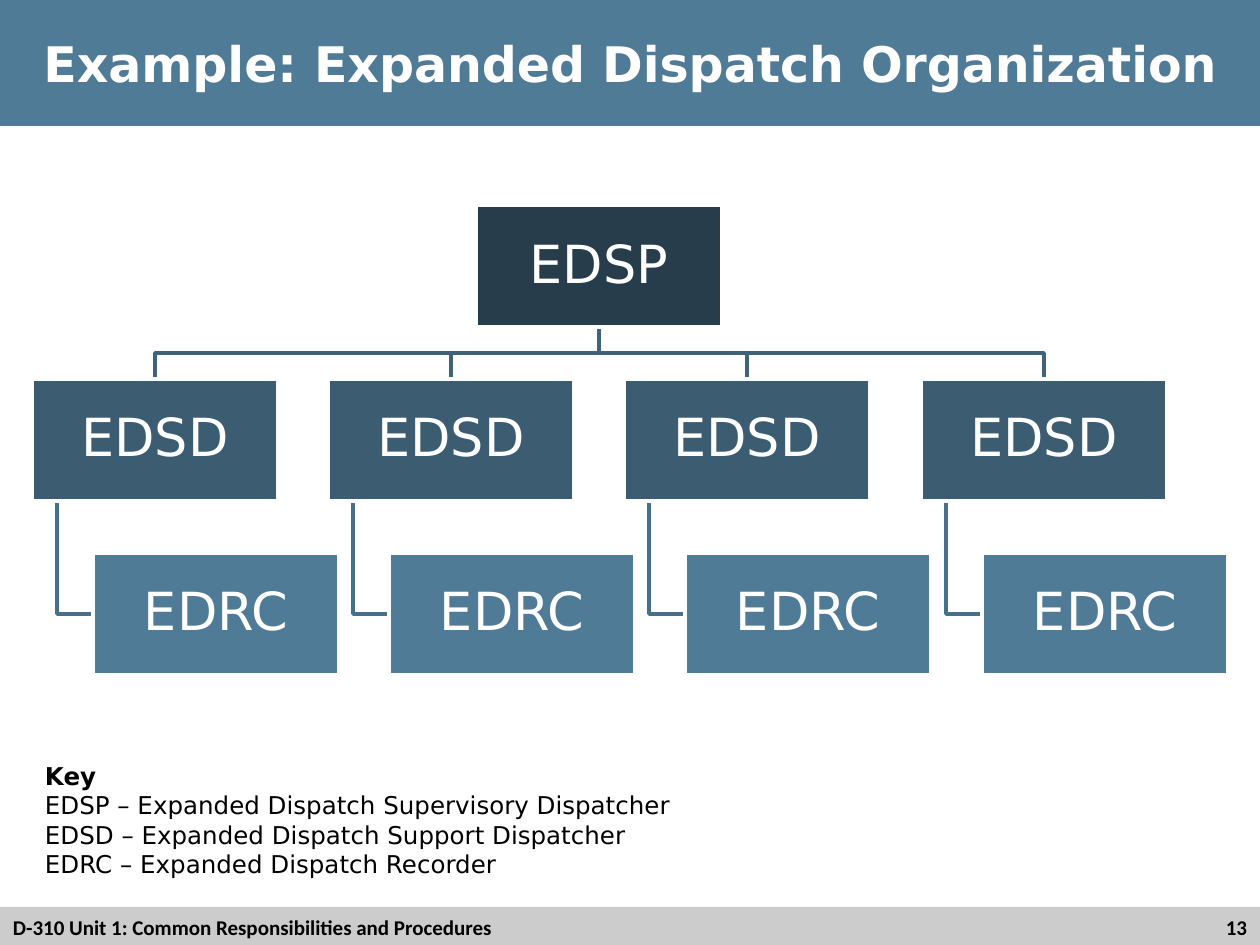
from pptx import Presentation
from pptx.dml.color import RGBColor
from pptx.enum.shapes import MSO_SHAPE
from pptx.enum.text import MSO_ANCHOR, PP_ALIGN
from pptx.util import Emu, Pt

SCALE = 914400 / 126
WHITE = RGBColor(0xFF, 0xFF, 0xFF)
BLACK = RGBColor(0, 0, 0)
GRAY = RGBColor(0xCC, 0xCC, 0xCC)
NAVY = RGBColor(0x28, 0x3D, 0x4C)
SLATE = RGBColor(0x3C, 0x5C, 0x71)
STEEL = RGBColor(0x50, 0x7B, 0x97)
UPPER_LINE = RGBColor(0x40, 0x63, 0x79)
LOWER_LINE = RGBColor(0x49, 0x70, 0x89)

deck = Presentation()
deck.slide_width = Emu(round(1260 * SCALE))
deck.slide_height = Emu(round(945 * SCALE))
page = deck.slides.add_slide(deck.slide_layouts[6])


def add_text(text, left, top, width, height, fill=None, border=None, size=14,
             font="DejaVu Sans", color=BLACK, bold_lines=0, align=PP_ALIGN.LEFT,
             anchor=MSO_ANCHOR.MIDDLE, margin_x=13, margin_y=6, spacing=None):
    area = [Emu(round(value * SCALE)) for value in (left, top, width, height)]
    if fill is None:
        box = page.shapes.add_textbox(*area)
    else:
        box = page.shapes.add_shape(MSO_SHAPE.RECTANGLE, *area)
        box.shadow.inherit = False
        box.fill.solid()
        box.fill.fore_color.rgb = fill
        if border is None:
            box.line.fill.background()
        else:
            box.line.color.rgb = border
            box.line.width = Pt(2)
    frame = box.text_frame
    frame.word_wrap = True
    frame.vertical_anchor = anchor
    frame.margin_left = frame.margin_right = Emu(round(margin_x * SCALE))
    frame.margin_top = frame.margin_bottom = Emu(round(margin_y * SCALE))
    for index, line in enumerate(text.split("\n")):
        para = frame.paragraphs[0] if index == 0 else frame.add_paragraph()
        para.alignment = align
        para.line_spacing = spacing
        if not line:
            continue
        span = para.add_run()
        span.text = line
        span.font.name = font
        span.font.size = Pt(size)
        span.font.bold = index < bold_lines
        span.font.color.rgb = color
    return box


def add_elbow(points, color):
    builder = page.shapes.build_freeform(*points[0], scale=SCALE)
    builder.add_line_segments(points[1:], close=False)
    elbow = builder.convert_to_shape()
    elbow.shadow.inherit = False
    elbow.fill.background()
    elbow.line.color.rgb = color
    elbow.line.width = Pt(2)


footer = {"font": "Calibri", "size": 12, "bold_lines": 1}
add_text("", 0, 907, 1260, 40, fill=GRAY)
add_text("D-310 Unit 1: Common Responsibilities and Procedures",
         0, 907, 756, 40, margin_y=13, **footer)
add_text("13", 966, 907, 294, 40, align=PP_ALIGN.RIGHT, **footer)
add_text("Example: Expanded Dispatch Organization", 0, 0, 1260, 126, fill=STEEL,
         size=28, color=WHITE, bold_lines=1, align=PP_ALIGN.CENTER)

box_width, box_height = 246, 122
chief_top, support_top, recorder_top = range(205, 554, 174)
chief_left = 476
chief_center = chief_left + box_width // 2
chief_bottom = chief_top + box_height
bus_y = (chief_bottom + support_top) // 2
support_lefts = [32 + column * 889 // 3 for column in range(4)]
recorder_offset = 61

for left in support_lefts:
    center = left + box_width // 2
    stem = left + 25
    recorder_middle = recorder_top + box_height // 2
    add_elbow([(stem, support_top + box_height), (stem, recorder_middle),
               (left + recorder_offset, recorder_middle)], LOWER_LINE)
    add_elbow([(chief_center, chief_bottom), (chief_center, bus_y),
               (center, bus_y), (center, support_top)], UPPER_LINE)

positions = [("EDSP", chief_left, chief_top, NAVY)]
for left in support_lefts:
    positions.append(("EDSD", left, support_top, SLATE))
    positions.append(("EDRC", left + recorder_offset, recorder_top, STEEL))
for name, left, top, fill in positions:
    add_text(name, left, top, box_width, box_height, fill=fill, border=WHITE,
             size=30, color=WHITE, align=PP_ALIGN.CENTER,
             margin_x=3, margin_y=3, spacing=0.9)

add_text("Key\n"
         "EDSP – Expanded Dispatch Supervisory Dispatcher\n"
         "EDSD – Expanded Dispatch Support Dispatcher\n"
         "EDRC – Expanded Dispatch Recorder",
         32, 755, 655, 170, bold_lines=1, anchor=MSO_ANCHOR.TOP)

deck.save("out.pptx")
